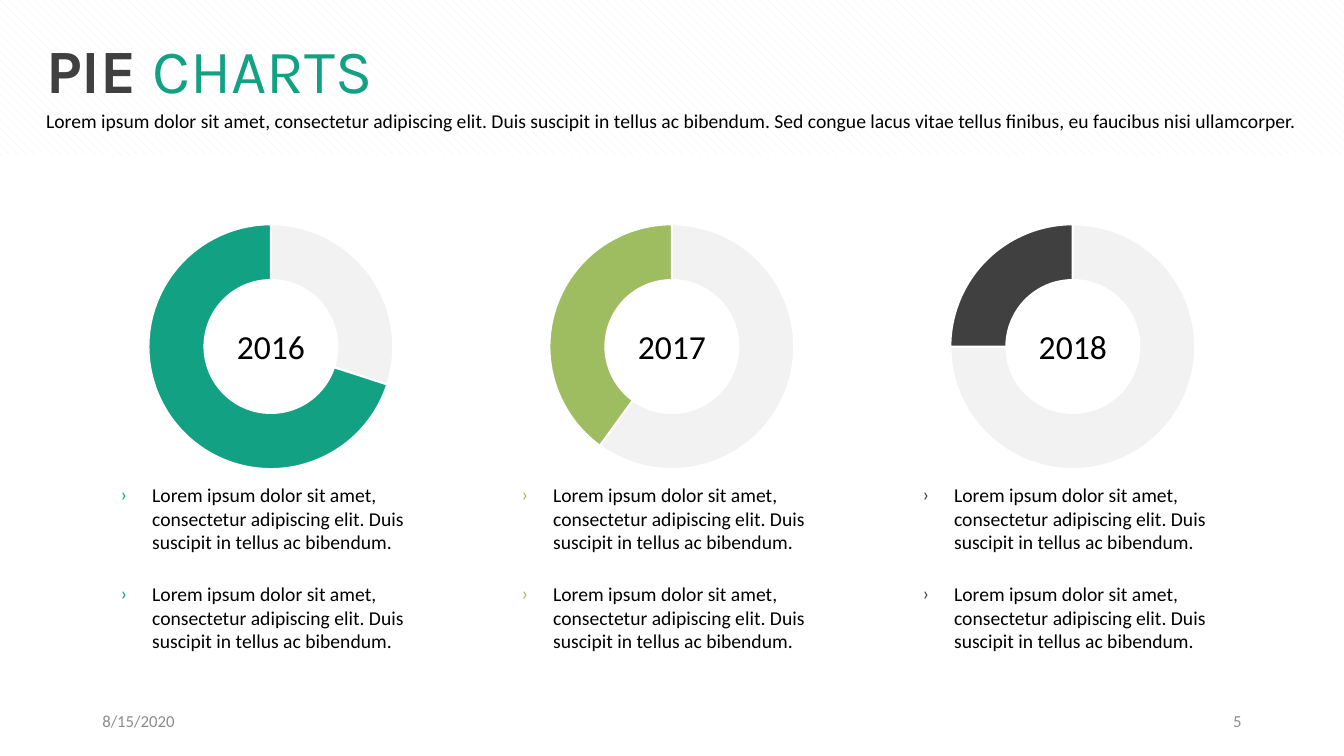
from lxml import etree
from pptx import Presentation
from pptx import util as u
from pptx.chart.data import CategoryChartData
from pptx.dml.color import RGBColor
from pptx.enum import chart as ch, dml, shapes, text
from pptx.oxml import parse_xml
from pptx.oxml.ns import nsdecls, qn

Pt = u.Pt
LOREM = "Lorem ipsum dolor sit amet, consectetur adipiscing elit. Duis suscipit in tellus ac bibendum."
ALIGN = text.PP_ALIGN
LAYOUT = (
    f'<c:layout {nsdecls("c")}><c:manualLayout><c:layoutTarget val="inner"/>'
    '<c:xMode val="edge"/><c:yMode val="edge"/><c:x val="0.09"/><c:y val="0.05"/>'
    '<c:w val="0.82"/><c:h val="0.9"/></c:manualLayout></c:layout>'
)


def rgb(value):
    return RGBColor.from_string(value)


def write(sp, runs, size, align=ALIGN.LEFT, anchor="MIDDLE", inset=True, font="Calibri"):
    tf = sp.text_frame
    tf.word_wrap = True
    tf.vertical_anchor = text.MSO_ANCHOR[anchor]
    if not inset:
        for side in ("left", "top", "right", "bottom"):
            setattr(tf, f"margin_{side}", 0)
    p = tf.paragraphs[0]
    p.alignment = align
    for words, color, bold in runs:
        r = p.add_run()
        r.text = words
        for key, value in {"name": font, "size": Pt(size), "bold": bold}.items():
            setattr(r.font, key, value)
        r.font.color.rgb = rgb(color)
    return p


prs = Presentation()
prs.slide_width, prs.slide_height = Pt(960), Pt(540)
s = prs.slides.add_slide(prs.slide_layouts[6])

band = s.shapes.add_shape(shapes.MSO_SHAPE.RECTANGLE, 0, 0, Pt(960), Pt(111))
band.shadow.inherit = False
band.line.fill.background()
band.fill.patterned()
band.fill.pattern = dml.MSO_PATTERN.DASHED_DOWNWARD_DIAGONAL
band.fill.fore_color.rgb = rgb("F2F2F2")
band.fill.back_color.rgb = rgb("FFFFFF")

title = s.shapes.add_textbox(Pt(33), Pt(23), Pt(894), Pt(53))
write(title, [("PIE ", "404040", True), ("CHARTS", "13A183", False)], 44,
      anchor="TOP", inset=False, font="Karla")
subtitle = s.shapes.add_textbox(Pt(33), Pt(78), Pt(894), Pt(17))
write(subtitle, [(LOREM + " Sed congue lacus vitae tellus finibus, eu faucibus nisi ullamcorper.",
                  "000000", False)], 14, anchor="TOP", inset=False)

for left, words, align in ((66, "8/15/2020", ALIGN.LEFT), (678, "5", ALIGN.RIGHT)):
    footer = s.shapes.add_textbox(Pt(left), Pt(500.5), Pt(216), Pt(28.75))
    write(footer, [(words, "8C8C8C", False)], 12, align)

years = (("2016", 70, "13A183"), ("2017", 40, "9EBC60"), ("2018", 25, "404040"))
for i, (year, share, color) in enumerate(years):
    left = 86.2 + 286.4 * i
    data = CategoryChartData()
    data.categories = ["1", "2"]
    data.add_series("Series 1", (100 - share, share))
    pie = s.shapes.add_chart(ch.XL_CHART_TYPE.PIE, Pt(left), Pt(150.5), Pt(214.6), Pt(194.4), data).chart
    pie.has_legend = False
    pie.has_title = False
    pie.font.name, pie.font.size = "Calibri", Pt(10)
    pie.font.color.rgb = rgb("000000")
    pie.plots[0].vary_by_categories = True
    for n, slice_color in enumerate(("F2F2F2", color)):
        fmt = pie.plots[0].series[0].points[n].format
        fmt.fill.solid()
        fmt.fill.fore_color.rgb = rgb(slice_color)
        fmt.line.color.rgb = rgb("FFFFFF")
        fmt.line.width = Pt(1.5)
    plot_area = pie.element.find(".//" + qn("c:plotArea"))
    for old in plot_area.findall(qn("c:layout")):
        plot_area.remove(old)
    plot_area.insert(0, parse_xml(LAYOUT))

    hole = s.shapes.add_shape(shapes.MSO_SHAPE.OVAL, Pt(left + 59.1), Pt(199.3), Pt(96.4), Pt(96.4))
    hole.shadow.inherit = False
    hole.fill.solid()
    hole.fill.fore_color.rgb = rgb("FFFFFF")
    hole.line.fill.background()
    write(hole, [(year, "000000", False)], 24, ALIGN.CENTER)

    for top in (344.9, 415.6):
        note = s.shapes.add_textbox(Pt(left), Pt(top), Pt(214.6), Pt(51))
        pPr = write(note, [(LOREM, "000000", False)], 14, inset=False)._p.get_or_add_pPr()
        pPr.set("marL", str(Pt(22.5)))
        pPr.set("indent", str(-Pt(22.5)))
        bullet_color = etree.SubElement(pPr, qn("a:buClr"))
        etree.SubElement(bullet_color, qn("a:srgbClr"), val=color)
        etree.SubElement(pPr, qn("a:buFont"), typeface="Calibri")
        etree.SubElement(pPr, qn("a:buChar"), char="›")

prs.save("out.pptx")
